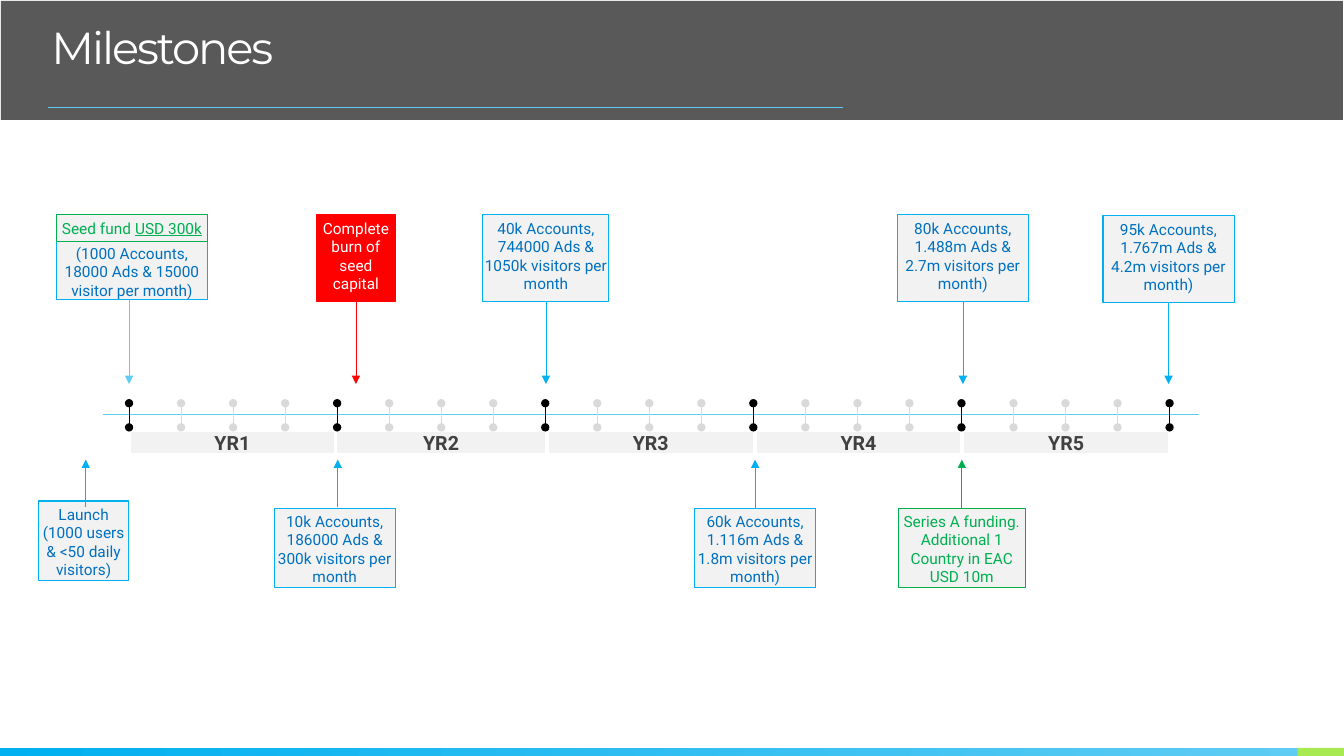
from lxml.etree import SubElement
from pptx import Presentation
from pptx.dml.color import RGBColor
from pptx.enum.shapes import MSO_CONNECTOR, MSO_SHAPE
from pptx.enum.text import MSO_ANCHOR, MSO_AUTO_SIZE, PP_ALIGN
from pptx.oxml.ns import qn
from pptx.util import Pt

PX = 9144
BLACK = RGBColor(0x00, 0x00, 0x00)
WHITE = RGBColor(0xFF, 0xFF, 0xFF)
CHARCOAL = RGBColor(0x40, 0x40, 0x40)
SILVER = RGBColor(0xD9, 0xD9, 0xD9)
PALE = RGBColor(0xF2, 0xF2, 0xF2)
BLUE = RGBColor(0x00, 0xB0, 0xF0)
SKY = RGBColor(0x5E, 0xCC, 0xF3)
NAVY = RGBColor(0x00, 0x70, 0xC0)
GREEN = RGBColor(0x00, 0xB0, 0x50)
LIME = RGBColor(0xA7, 0xEA, 0x52)
RED = RGBColor(0xFF, 0x00, 0x00)


class Deck:
    heading_font = "Montserrat"
    body_font = "Roboto"

    def __init__(self, width, height):
        self.prs = Presentation()
        self.prs.slide_width = width * PX
        self.prs.slide_height = height * PX
        self.slide = self.prs.slides.add_slide(self.prs.slide_layouts[5])

    def style(self, p, size, color, font, bold=False):
        p.font.name = font
        p.font.size = Pt(size)
        p.font.bold = bold
        p.font.color.rgb = color

    def title(self, text, box):
        sp = self.slide.shapes.title
        sp.left, sp.top, sp.width, sp.height = [v * PX for v in box]
        self.slide.shapes._spTree.append(sp._element)
        tf = sp.text_frame
        tf.word_wrap = True
        tf.auto_size = MSO_AUTO_SIZE.NONE
        tf.vertical_anchor = MSO_ANCHOR.TOP
        p = tf.paragraphs[0]
        p.alignment = PP_ALIGN.LEFT
        p.line_spacing = 0.9
        self.style(p, 32, WHITE, self.heading_font)
        r = p.add_run()
        r.text = text
        r._r.get_or_add_rPr().set("spc", "-150")

    def rect(self, box, fill, line=None, alpha=None):
        sp = self.slide.shapes.add_shape(MSO_SHAPE.RECTANGLE, *[v * PX for v in box])
        sp.shadow.inherit = False
        sp.fill.solid()
        sp.fill.fore_color.rgb = fill
        if alpha is not None:
            color = sp._element.spPr.find(qn("a:solidFill"))[0]
            SubElement(color, qn("a:alpha")).set("val", str(alpha * 1000))
        if line is None:
            sp.line.fill.background()
        else:
            sp.line.color.rgb = line
            sp.line.width = Pt(0.75)
        return sp

    def gradient(self, box, start, end):
        sp = self.rect(box, start)
        sp.fill.gradient()
        sp.fill.gradient_angle = 0
        for stop, color in zip(sp.fill.gradient_stops, (start, end)):
            stop.color.rgb = color

    def frame(self, sp, top_inset, anchor):
        tf = sp.text_frame
        tf.word_wrap = True
        tf.margin_left = tf.margin_right = tf.margin_bottom = 0
        tf.margin_top = top_inset * PX
        tf.vertical_anchor = anchor
        return tf

    def year(self, text, left, width):
        sp = self.rect((left, 429, width, 20), PALE, PALE)
        p = self.frame(sp, 0, MSO_ANCHOR.MIDDLE).paragraphs[0]
        p.text = text
        p.alignment = PP_ALIGN.CENTER
        p.space_before = Pt(10)
        p.space_after = Pt(5)
        self.style(p, 14, CHARCOAL, self.body_font, True)

    def callout(self, box, text, color=NAVY, line=BLUE, fill=PALE, underlined=""):
        sp = self.rect(box, fill, line)
        tf = self.frame(sp, 4, MSO_ANCHOR.TOP)
        tf.text = text
        for p in tf.paragraphs:
            p.alignment = PP_ALIGN.CENTER
            self.style(p, 11, color, self.body_font)
        if underlined:
            r = tf.paragraphs[-1].add_run()
            r.text = underlined
            r.font.underline = True
        return sp

    def line(self, start, end, color, weight=0.5, head=None, tail=None):
        x1, y1, x2, y2 = [round(v * PX) for v in (*start, *end)]
        cxn = self.slide.shapes.add_connector(MSO_CONNECTOR.STRAIGHT, x1, y1, x2, y2)
        cxn.line.color.rgb = color
        cxn.line.width = Pt(weight)
        ln = cxn.line._get_or_add_ln()
        for tag, kind in (("a:headEnd", head), ("a:tailEnd", tail)):
            if kind:
                SubElement(ln, qn(tag)).set("type", kind)
        SubElement(cxn._element.spPr, qn("a:effectLst"))
        return cxn

    def arrow(self, sp, x, start, end, color):
        cxn = self.line((x, start), (x, end), color, tail="triangle")
        middle = sp.left + sp.width // 2
        if abs(middle - x * PX) <= PX:
            cxn.begin_connect(sp, 2 if end > start else 0)
            cxn.end_x = middle


def main():
    deck = Deck(1333, 750)
    deck.gradient((0, 742, 1287, 8), BLUE, SKY)
    deck.rect((1287, 742, 46, 8), LIME)
    deck.rect((1, 1, 1331, 118), BLACK, alpha=65)
    deck.title("Milestones", (41, 21, 787, 79))
    deck.line((48, 107), (836, 107), SKY)

    deck.line((102, 411), (1189, 411), SKY)
    years = [(130, 201), (335, 205), (545, 201), (751, 201), (957, 201)]
    for n, (left, width) in enumerate(years, 1):
        deck.year(f"YR{n}", left, width)
    for quarter in range(21):
        x = 128 + 51.6 * quarter
        color = SILVER if quarter % 4 else BLACK
        weight = 0.5 if quarter < 12 else 0.25
        deck.line((x, 400), (x, 424), color, weight, "oval", "oval")

    seed = deck.callout((56, 238, 150, 59), "(1000 Accounts, 18000 Ads & 15000 visitor per month)")
    deck.callout((56, 213, 150, 27), "Seed fund ", GREEN, GREEN, underlined="USD 300k")
    deck.arrow(seed, 128, 298, 381, SKY)

    burn = deck.callout((314, 213, 78, 86), "Complete burn of seed capital", WHITE, RED, RED)
    deck.arrow(burn, 353, 298, 381, RED)

    above = [
        ((479, 213, 125, 86), "40k Accounts, 744000 Ads & 1050k visitors per month", 541),
        ((890, 213, 130, 86), "80k Accounts, 1.488m Ads & 2.7m visitors per month)", 954),
        ((1094, 214, 130, 86), "95k Accounts, 1.767m Ads & 4.2m visitors per month)", 1158),
    ]
    for box, text, x in above:
        deck.arrow(deck.callout(box, text), x, 298, 381, BLUE)

    below = [
        ((38, 497, 90, 79), "Launch (1000 users & <50 daily visitors)", 85),
        ((272, 504, 120, 79), "10k Accounts, 186000 Ads & 300k visitors per month", 335),
        ((689, 504, 120, 79), "60k Accounts, 1.116m Ads & 1.8m visitors per month)", 748),
    ]
    for box, text, x in below:
        deck.arrow(deck.callout(box, text), x, 503, 456, BLUE)

    funding = "Series A funding.\nAdditional 1 Country in EAC\nUSD 10m"
    series = deck.callout((891, 504, 126, 79), funding, GREEN, GREEN)
    deck.arrow(series, 953, 503, 456, GREEN)

    deck.prs.save("out.pptx")


if __name__ == "__main__":
    main()
